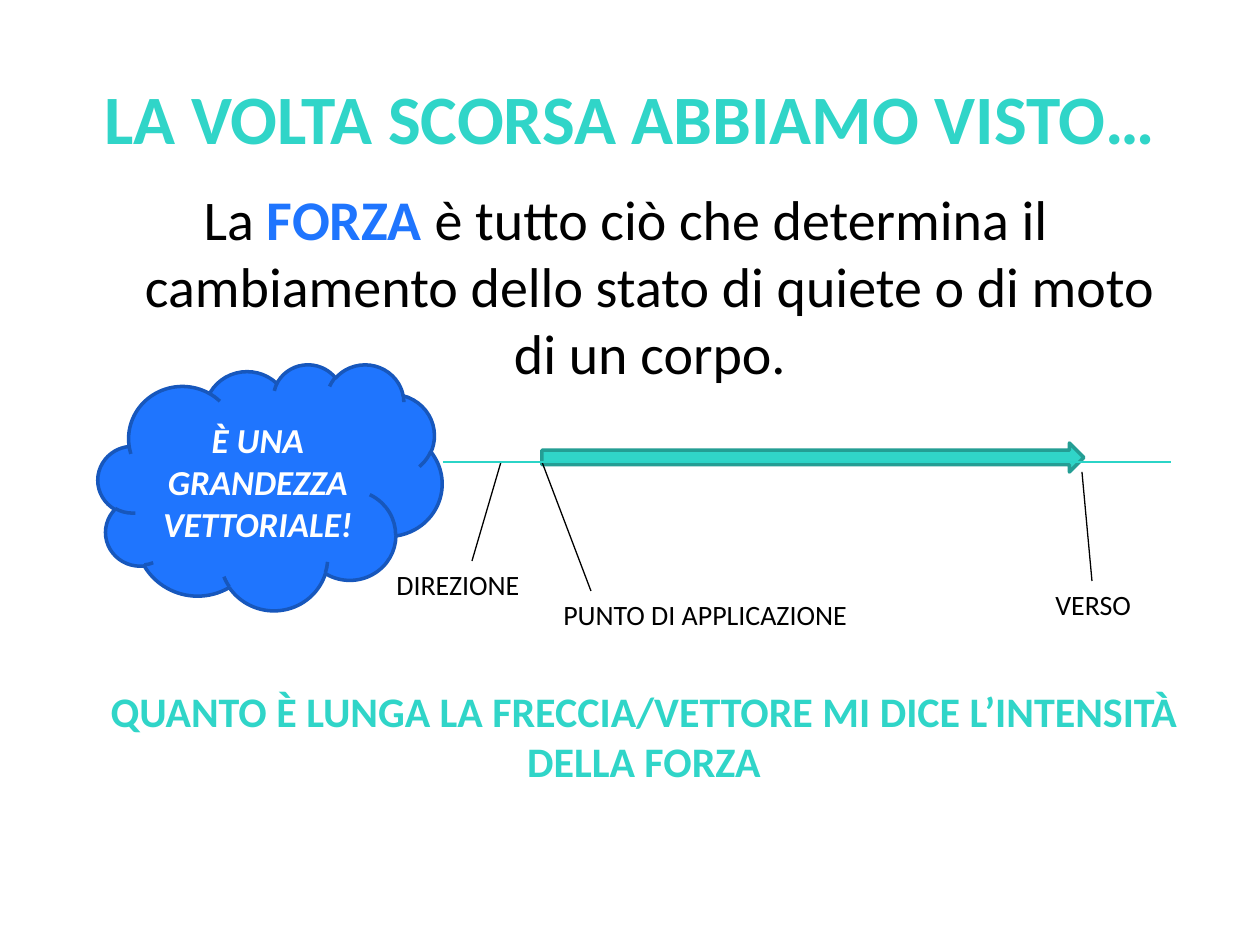
from lxml import etree
from pptx import Presentation, util as u
from pptx.dml.color import RGBColor
from pptx.enum import shapes, text
from pptx.oxml.ns import qn

PX = u.Inches(1) / 126
COLORS = {
    "turquoise": "30D5C8", "turquoise_dark": "249E94", "axis": "2BD4C7",
    "blue": "1F75FE", "blue_dark": "1757BC", "black": "000000", "white": "FFFFFF",
}
CENTER, LEFT = text.PP_ALIGN.CENTER, text.PP_ALIGN.LEFT
TOP, MIDDLE = text.MSO_ANCHOR.TOP, text.MSO_ANCHOR.MIDDLE

# Text runs: (wording, colour, font values)
TITLE = [("LA VOLTA SCORSA ABBIAMO VISTO…", "turquoise", {"size": u.Pt(39.6), "bold": True})]
DEFINITION = [
    ("La ", "black", {"size": u.Pt(32)}),
    ("FORZA", "blue", {"size": u.Pt(32), "bold": True}),
    (" è tutto ciò che determina il cambiamento dello stato di quiete o di moto di un corpo.",
     "black", {"size": u.Pt(32)}),
]
CLOUD = [("È UNA GRANDEZZA VETTORIALE!", "white", {"size": u.Pt(20), "bold": True, "italic": True})]
INTENSITY = [("QUANTO È LUNGA LA FRECCIA/VETTORE MI DICE L’INTENSITÀ DELLA FORZA",
              "turquoise", {"size": u.Pt(24), "bold": True})]

# Places in px: left, top, width, height
TITLE_BOX = (63, 38, 1134, 157)
DEFINITION_BOX = (59, 178, 1134, 203)
VECTOR_BOX = (542, 443, 542, 29)
CLOUD_BOX = (98, 364, 344, 246)
INTENSITY_BOX = (98, 679, 1092, 115)
HANGING = 48

# Lines in px: start, end, colour
AXIS_Y = 462
LINES = [
    ((501, AXIS_Y), (472, 561), "black"),
    ((542, AXIS_Y), (591, 591), "black"),
    ((1082, 472), (1092, 581), "black"),
    ((443, AXIS_Y), (1171, AXIS_Y), "axis"),
]
# Vector labels: wording, left, top, width
LABELS = [
    ("DIREZIONE", 384, 561, 217),
    ("PUNTO DI APPLICAZIONE", 551, 591, 315),
    ("VERSO", 1043, 581, 118),
]
LABEL_HEIGHT = 47


def emu(lengths):
    return [round(length * PX) for length in lengths]


def rgb(name):
    return RGBColor.from_string(COLORS[name])


def place(shape, box):
    shape.left, shape.top, shape.width, shape.height = emu(box)


def write(shape, runs, align=CENTER, anchor=TOP):
    frame = shape.text_frame
    for key, value in {"word_wrap": True, "vertical_anchor": anchor,
                       "auto_size": text.MSO_AUTO_SIZE.NONE}.items():
        setattr(frame, key, value)
    paragraph = frame.paragraphs[0]
    paragraph.alignment = align
    paragraph.space_before = u.Pt(0)
    for wording, color, values in runs:
        run = paragraph.add_run()
        run.text = wording
        run.font.color.rgb = rgb(color)
        for key, value in {"name": "Calibri", **values}.items():
            setattr(run.font, key, value)
    return paragraph


def add_figure(slide, preset, box, fill, outline):
    figure = slide.shapes.add_shape(preset, *emu(box))
    figure.shadow.inherit = False
    figure.fill.solid()
    figure.fill.fore_color.rgb = rgb(fill)
    figure.line.color.rgb = rgb(outline)
    figure.line.width = u.Pt(2)
    return figure


def add_line(slide, start, end, color):
    line = slide.shapes.add_connector(shapes.MSO_CONNECTOR.STRAIGHT, *emu(start + end))
    line.line.color.rgb = rgb(color)
    line.line.width = u.Pt(0.75)
    etree.SubElement(line._element.spPr, qn("a:effectLst"))


def main():
    deck = Presentation()
    deck.slide_width, deck.slide_height = u.Inches(10), u.Inches(7.5)
    slide = deck.slides.add_slide(deck.slide_layouts[1])

    title, definition = slide.placeholders
    place(title, TITLE_BOX)
    write(title, TITLE, anchor=MIDDLE)
    place(definition, DEFINITION_BOX)
    properties = write(definition, DEFINITION)._p.get_or_add_pPr()
    properties.set("marL", str(round(HANGING * PX)))
    properties.set("indent", str(round(-HANGING * PX)))
    etree.SubElement(properties, qn("a:buNone"))

    add_figure(slide, shapes.MSO_SHAPE.RIGHT_ARROW, VECTOR_BOX, "turquoise", "turquoise_dark")
    cloud = add_figure(slide, shapes.MSO_SHAPE.CLOUD, CLOUD_BOX, "blue", "blue_dark")
    write(cloud, CLOUD, anchor=MIDDLE)
    for line in LINES:
        add_line(slide, *line)

    for wording, left, top, width in LABELS:
        label = slide.shapes.add_textbox(*emu((left, top, width, LABEL_HEIGHT)))
        write(label, [(wording, "black", {"size": u.Pt(16)})], LEFT)
    write(slide.shapes.add_textbox(*emu(INTENSITY_BOX)), INTENSITY)

    deck.save("out.pptx")


if __name__ == "__main__":
    main()
